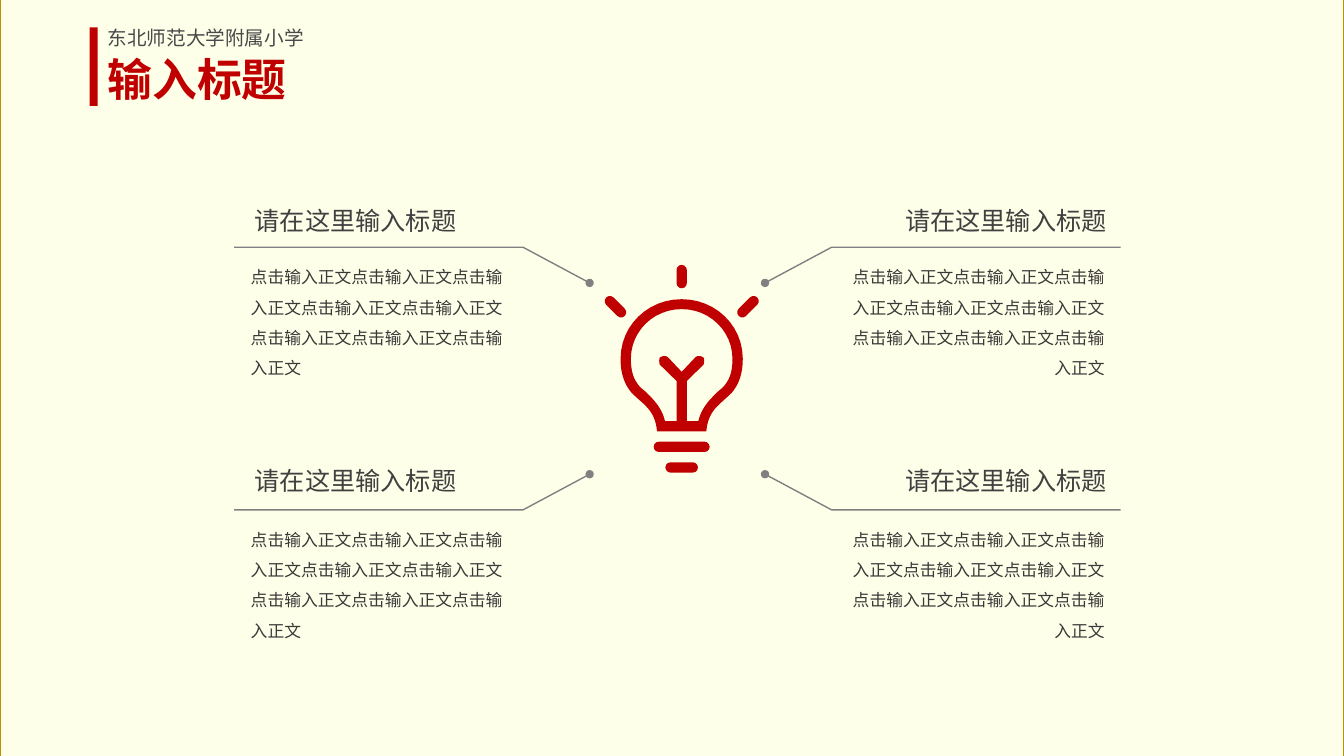
from lxml.etree import SubElement
from pptx import Presentation
from pptx.dml.color import RGBColor
from pptx.enum.shapes import MSO_SHAPE
from pptx.enum.text import MSO_AUTO_SIZE, PP_ALIGN
from pptx.oxml.ns import qn
from pptx.util import Cm, Pt

COLORS = {
    "background": "FEFFE9",
    "border": "BF9000",
    "red": "C00000",
    "callout": "808080",
    "heading": "404040",
    "body": "3B3838",
    "school": "494949",
}
CHINESE_FONT = "Noto Sans CJK SC"
CALLOUT_HEADING = "请在这里输入标题"
CALLOUT_BODY = "点击输入正文" * 8
CALLOUT_AXIS = 17.07
BULB_X, BULB_TOP = 17.18, 7.54
CURVE_STEPS = 12

BULB_OUTSIDE = [
    [(0, 0)],
    [(0.85, 0), (1.54, 0.66), (1.54, 1.5)],
    [(1.54, 1.9), (1.43, 2.16), (1.26, 2.36)],
    [(0.95, 2.67), (0.67, 2.79), (0.62, 3.33)],
]
BULB_INSIDE = [
    [(0, 0.25)],
    [(0.71, 0.25), (1.28, 0.81), (1.28, 1.5)],
    [(1.28, 1.83), (1.21, 2.03), (1.05, 2.21)],
    [(1, 2.26), (0.93, 2.31), (0.88, 2.36)],
    [(0.7, 2.54), (0.5, 2.74), (0.42, 3.07)],
    [(0.13, 3.07)],
    [(0.13, 2.06)],
    [(0.55, 1.65)],
    [(0.57, 1.6), (0.57, 1.5), (0.55, 1.47)],
    [(0.47, 1.42), (0.39, 1.42), (0.34, 1.47)],
    [(0, 1.83)],
]


def color(name):
    """Return the named colour."""
    return RGBColor.from_string(COLORS[name])


def add_block(slide, kind, left, top, width, height, fill, border=None):
    """Add a filled preset shape, outlined only when a border is named."""
    shape = slide.shapes.add_shape(kind, Cm(left), Cm(top), Cm(width), Cm(height))
    shape.shadow.inherit = False
    shape.fill.solid()
    shape.fill.fore_color.rgb = color(fill)
    if border:
        shape.line.color.rgb = color(border)
        shape.line.width = Pt(1)
    else:
        shape.line.fill.background()
    return shape


def add_text(slide, text, left, top, width, height, size, ink,
             font=CHINESE_FONT, bold=False, align=PP_ALIGN.LEFT, spacing=None):
    """Add a wrapped text box with one paragraph."""
    box = slide.shapes.add_textbox(Cm(left), Cm(top), Cm(width), Cm(height))
    frame = box.text_frame
    frame.word_wrap = True
    frame.auto_size = MSO_AUTO_SIZE.SHAPE_TO_FIT_TEXT
    frame.text = text
    paragraph = frame.paragraphs[0]
    paragraph.alignment = align
    if spacing:
        paragraph.line_spacing = spacing
    run = paragraph.runs[0]
    run.font.size = Pt(size)
    run.font.bold = bold
    run.font.color.rgb = color(ink)
    run.font.name = font
    east_asian = SubElement(run.font._element, qn("a:ea"))
    east_asian.set("typeface", CHINESE_FONT)


def add_callout_line(slide, points):
    """Add an open bent line that ends in a dot."""
    corners = [(Cm(x), Cm(y)) for x, y in points]
    builder = slide.shapes.build_freeform(*corners[0], scale=1.0)
    builder.add_line_segments(corners[1:], close=False)
    shape = builder.convert_to_shape()
    shape.shadow.inherit = False
    shape.fill.background()
    shape.line.color.rgb = color("callout")
    shape.line.width = Pt(1)
    tail = SubElement(shape.line._get_or_add_ln(), qn("a:tailEnd"))
    tail.set("type", "oval")


def add_callout(slide, on_right, line_y, dot_y, heading_y):
    """Add a heading, its bent line and its body text on one side."""
    mirror = (lambda x: 2 * CALLOUT_AXIS - x) if on_right else (lambda x: x)
    align = PP_ALIGN.RIGHT if on_right else PP_ALIGN.LEFT
    add_callout_line(slide, [(mirror(5.9), line_y), (mirror(13.18), line_y),
                             (mirror(14.86), dot_y)])
    add_text(slide, CALLOUT_BODY, 21.08 if on_right else 6.07, line_y + 0.12,
             7.01, 3.33, 12, "body", align=align, spacing=1.5)
    add_text(slide, CALLOUT_HEADING, 21.08 if on_right else 6.17, heading_y,
             7.06 if on_right else 6.91, 1.02, 18, "heading", align=align)


def trace(segments):
    """Turn points and cubic curves into a list of points."""
    points = []
    for segment in segments:
        if len(segment) == 1:
            points += segment
            continue
        controls = [points[-1], *segment]
        for step in range(1, CURVE_STEPS + 1):
            t = step / CURVE_STEPS
            weights = ((1 - t) ** 3, 3 * t * (1 - t) ** 2, 3 * t * t * (1 - t), t ** 3)
            points.append(tuple(sum(w * p[axis] for w, p in zip(weights, controls))
                                for axis in (0, 1)))
    return points


def symmetric_contour(segments):
    """Complete the right half of a bulb contour with its mirrored left half."""
    right = trace(segments)
    left = [(-x, y) for x, y in reversed(right) if x]
    return [(Cm(BULB_X + x), Cm(BULB_TOP + y)) for x, y in right + left]


def add_capsule(slide, center_x, center_y, width, height, rotation=0):
    """Add a fully rounded red bar around its centre."""
    bar = add_block(slide, MSO_SHAPE.ROUNDED_RECTANGLE, center_x - width / 2,
                    center_y - height / 2, width, height, "red")
    bar.adjustments[0] = 0.5
    bar.rotation = rotation


def add_light_bulb(slide):
    """Add the bulb with its base bars and rays."""
    outside, inside = map(symmetric_contour, (BULB_OUTSIDE, BULB_INSIDE))
    builder = slide.shapes.build_freeform(*outside[0], scale=1.0)
    builder.add_line_segments(outside[1:])
    builder.move_to(*inside[0])
    builder.add_line_segments(inside[1:])
    bulb = builder.convert_to_shape()
    bulb.shadow.inherit = False
    bulb.fill.solid()
    bulb.fill.fore_color.rgb = color("red")
    bulb.line.fill.background()
    add_capsule(slide, BULB_X, 11.26, 1.41, 0.26)
    add_capsule(slide, BULB_X, 11.78, 0.82, 0.26)
    add_capsule(slide, BULB_X, 6.97, 0.26, 0.59)
    for side in (-1, 1):
        add_capsule(slide, BULB_X + side * 1.67, 7.73, 0.66, 0.26, -45 * side)


def add_header(slide):
    """Add the red bar, the slide title and the school name."""
    add_text(slide, "输入标题", 2.46, 1.17, 12.8, 1.63, 32, "red", font="Lato", bold=True)
    add_text(slide, "东北师范大学附属小学", 2.46, 0.53, 9.02, 0.86, 14, "school")
    add_block(slide, MSO_SHAPE.RECTANGLE, 2.26, 0.69, 0.2, 1.98, "red")


def main():
    """Build the slide and save it."""
    presentation = Presentation()
    presentation.slide_width, presentation.slide_height = Cm(33.87), Cm(19.05)
    slide = presentation.slides.add_slide(presentation.slide_layouts[6])
    add_block(slide, MSO_SHAPE.RECTANGLE, 0, -0.05, 33.87, 19.18, "background", "border")
    for on_right in (False, True):
        add_callout(slide, on_right, line_y=6.23, dot_y=7.13, heading_y=5.05)
        add_callout(slide, on_right, line_y=12.85, dot_y=11.95, heading_y=11.61)
    add_light_bulb(slide)
    add_header(slide)
    presentation.save("out.pptx")


if __name__ == "__main__":
    main()
